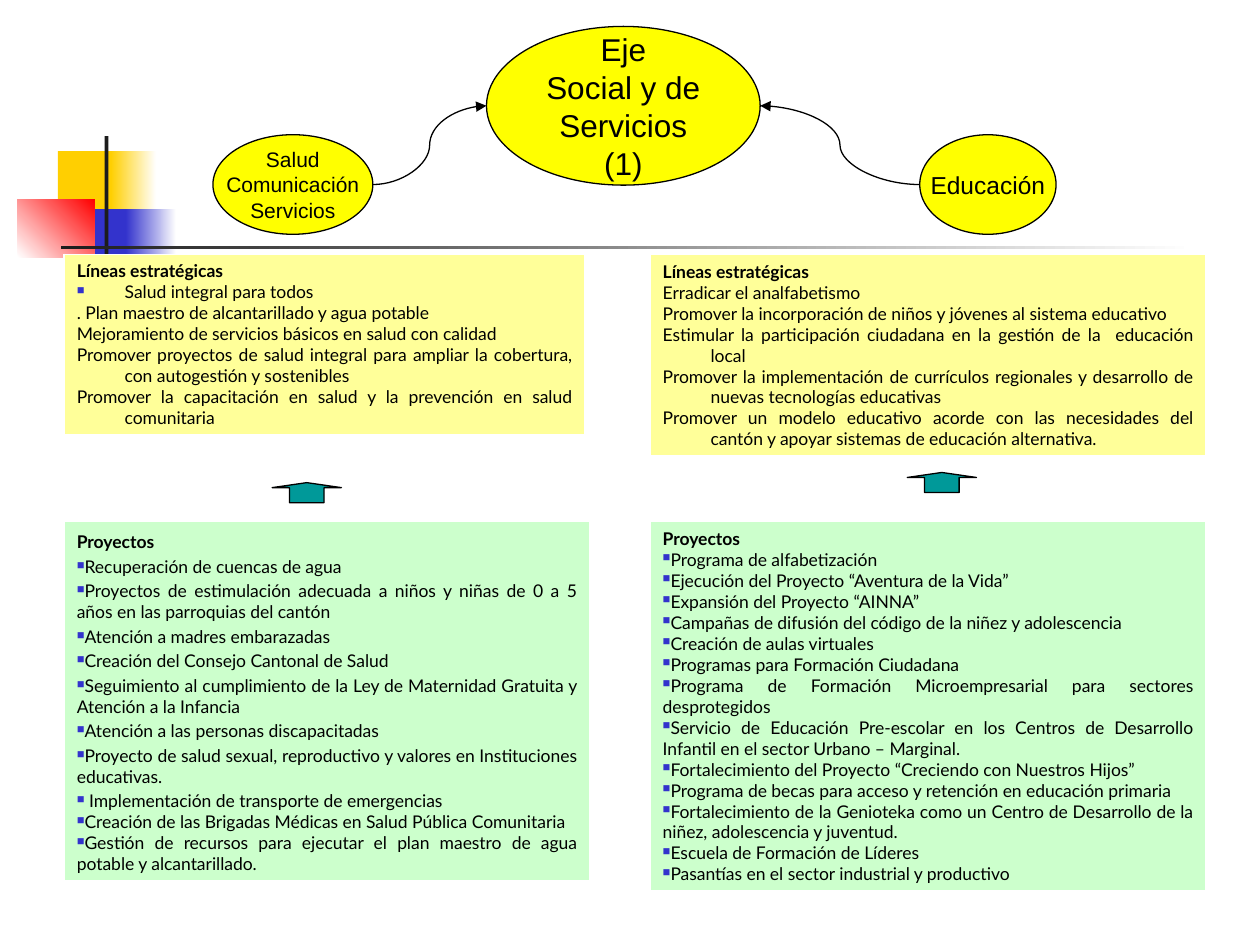
from dataclasses import dataclass

from lxml.etree import SubElement
from pptx import Presentation
from pptx.dml.color import RGBColor
from pptx.enum.shapes import MSO_CONNECTOR as Link, MSO_SHAPE as Kind
from pptx.enum.text import MSO_ANCHOR as Anchor, MSO_AUTO_SIZE as Fit, PP_ALIGN as Align
from pptx.oxml.ns import qn
from pptx.util import Pt


@dataclass(frozen=True)
class Theme:
    """Colours, fonts and type sizes of the slide."""
    ink: str = "000000"
    bar: str = "1C1C1C"
    white: str = "FFFFFF"
    gold: str = "FFCF01"
    blue: str = "3333CC"
    red: str = "FF0000"
    teal: str = "009999"
    sun: str = "FFFF00"
    cream: str = "FFFF99"
    mint: str = "CCFFCC"
    head: str = "Arial"
    body: str = "Lato"
    big: int = 18
    mid: int = 14
    small: int = 12
    text: int = 10


T = Theme()
LEFT, RIGHT = 36.7, 371.5
TOP, LOW = 145.4, 298.1
HANG = 27.36

HEALTH = [
    "Líneas estratégicas",
    "Salud integral para todos",
    ". Plan maestro de alcantarillado y agua potable",
    "Mejoramiento de servicios básicos en salud con calidad",
    "Promover proyectos de salud integral para ampliar la cobertura, con autogestión y sostenibles",
    "Promover la capacitación en salud y la prevención en salud comunitaria",
]
CARE = [
    "Proyectos",
    "Recuperación de cuencas de agua",
    "Proyectos de estimulación adecuada a niños y niñas de 0 a 5 años en las parroquias del cantón",
    "Atención a madres embarazadas",
    "Creación del Consejo Cantonal de Salud",
    "Seguimiento al cumplimiento de la Ley de Maternidad Gratuita y Atención a la Infancia",
    "Atención a las personas discapacitadas",
    "Proyecto de salud sexual, reproductivo y valores en Instituciones educativas.",
    " Implementación de transporte de emergencias",
    "Creación de las Brigadas Médicas en Salud Pública Comunitaria",
    "Gestión de recursos para ejecutar el plan maestro de agua potable y alcantarillado.",
]
SCHOOL = [
    "Líneas estratégicas",
    "Erradicar el analfabetismo",
    "Promover la incorporación de niños y jóvenes al sistema educativo",
    "Estimular la participación ciudadana en la gestión de la  educación local",
    "Promover la implementación de currículos regionales y desarrollo de nuevas tecnologías educativas",
    "Promover un modelo educativo acorde con las necesidades del cantón y apoyar sistemas de educación alternativa.",
]
CLASSES = [
    "Proyectos",
    "Programa de alfabetización",
    "Ejecución del Proyecto “Aventura de la Vida”",
    "Expansión del Proyecto “AINNA”",
    "Campañas de difusión del código de la niñez y adolescencia",
    "Creación de aulas virtuales",
    "Programas para Formación Ciudadana",
    "Programa de Formación Microempresarial para sectores desprotegidos",
    "Servicio de Educación Pre-escolar en los Centros de Desarrollo Infantil en el sector Urbano – Marginal.",
    "Fortalecimiento del Proyecto “Creciendo con Nuestros Hijos”",
    "Programa de becas para acceso y retención en educación primaria",
    "Fortalecimiento de la Genioteka como un Centro de Desarrollo de la niñez, adolescencia y juventud.",
    "Escuela de Formación de Líderes",
    "Pasantías en el sector industrial y productivo",
]


def rgb(code):
    """Turn a hex code into a colour."""
    return RGBColor.from_string(code)


def style(para, face, size, bold=False):
    """Format every run of a paragraph."""
    for run in para.runs:
        font = run.font
        font.name, font.size, font.bold = face, Pt(size), bold
        font.color.rgb = rgb(T.ink)


def label(frame, text, size):
    """Write centred, unwrapped text into a frame."""
    frame.text = text
    frame.auto_size = Fit.NONE
    frame.word_wrap = False
    frame.vertical_anchor = Anchor.MIDDLE
    for para in frame.paragraphs:
        para.alignment = Align.CENTER
        style(para, T.head, size)


def block(slide, kind, box, tint, fade=None, angle=0, edge=False):
    """Add a preset shape with a plain or fading fill."""
    shape = slide.shapes.add_shape(kind, *map(Pt, box))
    shape.shadow.inherit = False
    if fade:
        shape.fill.gradient()
        shape.fill.gradient_angle = angle
        for stop, code in zip(shape.fill.gradient_stops, (tint, fade)):
            stop.color.rgb = rgb(code)
    else:
        shape.fill.solid()
        shape.fill.fore_color.rgb = rgb(tint)
    if edge:
        shape.line.color.rgb = rgb(T.ink)
        shape.line.width = Pt(0.75)
    else:
        shape.line.fill.background()
    return shape


def oval(slide, box):
    """Add a yellow ellipse."""
    return block(slide, Kind.OVAL, box, T.sun, edge=True)


def side(shape, right):
    """Find the middle of a shape's right or left side."""
    return shape.left + shape.width * right, shape.top + shape.height // 2


def curve(slide, hub, node, right):
    """Link a node to the given side of the hub, with the arrowhead there."""
    ends = side(hub, right) + side(node, not right)
    link = slide.shapes.add_connector(Link.CURVE, *ends)
    link.line.color.rgb = rgb(T.ink)
    link.line.width = Pt(0.75)
    SubElement(link.line._get_or_add_ln(), qn("a:headEnd"), type="triangle")
    SubElement(link._element.spPr, qn("a:effectLst"))


def bullet(para):
    """Give a paragraph a small blue square bullet."""
    props = para._p.get_or_add_pPr()
    tint = SubElement(props, qn("a:buClr"))
    SubElement(tint, qn("a:srgbClr"), val=T.blue)
    SubElement(props, qn("a:buSzPct"), val="60000")
    SubElement(props, qn("a:buChar"), char="■")


def panel(slide, box, tint, lines, marks, hang=0, gaps=0, anchor=Anchor.BOTTOM):
    """Add a one-cell table with a bold heading and its list."""
    table = slide.shapes.add_table(1, 1, *map(Pt, box)).table
    cell = table.cell(0, 0)
    cell.fill.solid()
    cell.fill.fore_color.rgb = rgb(tint)
    cell.vertical_anchor = anchor
    cell.text_frame.text = "\n".join(lines)
    for i, para in enumerate(cell.text_frame.paragraphs):
        para.alignment = Align.JUSTIFY
        para.space_before = Pt(2 if i < gaps else 0)
        props = para._p.get_or_add_pPr()
        props.set("marL", str(Pt(hang)))
        props.set("indent", str(-Pt(hang)))
        if i in marks:
            bullet(para)
        style(para, T.body, T.text, bold=i == 0)


def decor(slide):
    """Draw the coloured squares and the two bars."""
    for box, tint, fade, angle in (
        ((33.1, 86.4, 34.6, 37.4), T.gold, None, 0),
        ((63.4, 86.4, 25.9, 37.4), T.gold, T.white, 0),
        ((42.5, 119.5, 33.1, 37.4), T.blue, None, 0),
        ((72, 119.5, 28.8, 37.4), T.blue, T.white, 0),
        ((10.1, 113.8, 43.9, 33.1), T.white, T.red, 45),
        ((59.8, 77.8, 2.2, 82.8), T.bar, None, 0),
        ((34.6, 140.4, 648, 2.2), T.bar, T.white, 0),
    ):
        block(slide, Kind.RECTANGLE, box, tint, fade, angle)


def main():
    """Build the slide and save it."""
    deck = Presentation()
    deck.slide_width, deck.slide_height = Pt(720), Pt(540)
    slide = deck.slides.add_slide(deck.slide_layouts[5])
    decor(slide)
    for x, y in ((155.5, 275.8), (518.4, 270)):
        block(slide, Kind.UP_ARROW, (x, y, 39.6, 11.5), T.teal, edge=True).adjustments[1] = 0.25
    spot = (278, 15.1, 156.4, 90.7)
    hub = oval(slide, spot)
    for box, text, size, right in (
        ((525.6, 77, 77.9, 56.9), "Educación", T.mid, True),
        ((121.7, 77, 91.4, 56.9), "Salud\nComunicación\nServicios", T.small, False),
    ):
        node = oval(slide, box)
        label(node.text_frame, text, size)
        curve(slide, hub, node, right)
    title = slide.shapes.title
    title.left, title.top, title.width, title.height = map(Pt, spot)
    label(title.text_frame, "Eje\nSocial y de\nServicios\n(1)", T.big)
    slide.shapes._spTree.append(title._element)
    panel(slide, (LEFT, TOP, 297.4, 103), T.cream, HEALTH, (1,), HANG, anchor=Anchor.TOP)
    panel(slide, (LEFT, LOW, 300.2, 205.2), T.mint, CARE, range(1, len(CARE)), gaps=9)
    panel(slide, (RIGHT, TOP, 317.5, 115.2), T.cream, SCHOOL, (), HANG)
    panel(slide, (RIGHT, LOW, 317.5, 211), T.mint, CLASSES, range(1, len(CLASSES)))
    deck.save("out.pptx")


if __name__ == "__main__":
    main()
